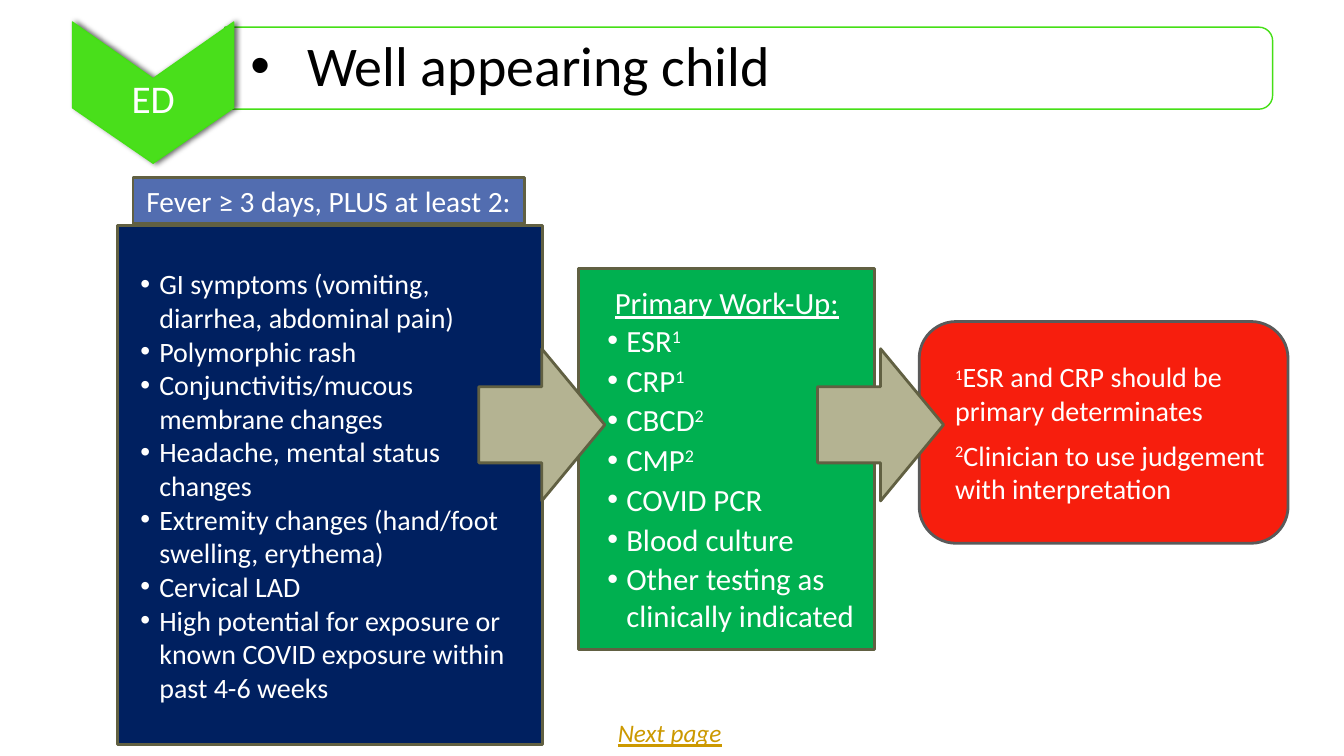
"""Build the slide on the work-up of a well appearing child."""
from dataclasses import dataclass, field
from typing import Any, Optional

from lxml.etree import SubElement
from pptx import Presentation
from pptx.dml.color import RGBColor
from pptx.enum.shapes import MSO_SHAPE
from pptx.enum.text import MSO_ANCHOR, MSO_AUTO_SIZE, PP_ALIGN
from pptx.oxml.ns import qn
from pptx.util import Pt

WHITE, OLIVE, GREEN = "FFFFFF", "616042", "45DF16"


@dataclass(frozen=True)
class Segment:
    """A stretch of text, raised when it is a note mark."""
    text: str
    raised: bool = False
    size: Optional[float] = None


@dataclass(frozen=True)
class TextStyle:
    """Look of one paragraph, with lengths in points."""
    size: float
    color: str = WHITE
    bullet: bool = False
    margin: float = 0
    indent: float = 0
    font: dict[str, Any] = field(default_factory=dict)
    layout: dict[str, Any] = field(default_factory=dict)


@dataclass(frozen=True)
class Line:
    """One paragraph made of text segments."""
    segments: tuple[Segment, ...]
    style: TextStyle


@dataclass(frozen=True)
class Panel:
    """A shape or plain text box, with its place in points."""
    box: tuple[float, float, float, float]
    lines: tuple[Line, ...] = ()
    kind: Optional[MSO_SHAPE] = MSO_SHAPE.RECTANGLE
    fill: str = WHITE
    outline: str = OLIVE
    left_inset: float = 7.2


def rgb(color: str) -> RGBColor:
    """Turn a hex string into a colour."""
    return RGBColor.from_string(color)


def apply(target: Any, values: dict[str, Any]) -> None:
    """Set each named attribute on the target."""
    for name, value in values.items():
        setattr(target, name, value)


def place(shape: Any, box: tuple[float, float, float, float]) -> None:
    """Move and size a shape in points."""
    apply(shape, dict(zip(("left", "top", "width", "height"), map(Pt, box))))


def paint(shape: Any, fill: str, outline: str, width: float) -> None:
    """Give a shape a flat fill and outline."""
    shape.shadow.inherit = False
    shape.fill.solid()
    shape.fill.fore_color.rgb = rgb(fill)
    shape.line.color.rgb = rgb(outline)
    shape.line.width = Pt(width)


def add_bullet(properties: Any, color: str) -> None:
    """Add a round bullet in the given colour."""
    bullet_color = SubElement(properties, qn("a:buClr"))
    SubElement(bullet_color, qn("a:srgbClr"), val=color)
    SubElement(properties, qn("a:buFont"), typeface="Arial")
    SubElement(properties, qn("a:buChar"), char="•")


def write(shape: Any, lines: tuple[Line, ...], frame_values: dict[str, Any]) -> None:
    """Fill a shape with formatted paragraphs."""
    frame = shape.text_frame
    apply(frame, {"word_wrap": True, **frame_values})
    for index, line in enumerate(lines):
        style = line.style
        paragraph = frame.add_paragraph() if index else frame.paragraphs[0]
        apply(paragraph, {"alignment": PP_ALIGN.LEFT, **style.layout})
        properties = paragraph._p.get_or_add_pPr()
        properties.set("marL", str(Pt(style.margin)))
        properties.set("indent", str(Pt(style.indent)))
        if style.bullet:
            add_bullet(properties, style.color)
        for segment in line.segments:
            run = paragraph.add_run()
            run.text = segment.text
            apply(run.font, {"name": "Calibri", "size": Pt(segment.size or style.size), **style.font})
            run.font.color.rgb = rgb(style.color)
            if segment.raised:
                run._r.get_or_add_rPr().set("baseline", "30000")


def add_panel(slide: Any, panel: Panel) -> None:
    """Draw a panel and its text."""
    box = tuple(map(Pt, panel.box))
    frame_values: dict[str, Any] = {"margin_left": Pt(panel.left_inset)}
    if panel.kind is None:
        shape = slide.shapes.add_textbox(*box)
        frame_values["auto_size"] = MSO_AUTO_SIZE.SHAPE_TO_FIT_TEXT
    else:
        shape = slide.shapes.add_shape(panel.kind, *box)
        paint(shape, panel.fill, panel.outline, 2)
        frame_values["vertical_anchor"] = MSO_ANCHOR.MIDDLE
    if panel.lines:
        write(shape, panel.lines, frame_values)


def add_title(slide: Any) -> None:
    """Place the title on a banner with rounded right corners."""
    left, top, width, height = box = (160.6, 19.4, 748.4, 58.6)
    banner = slide.shapes.add_shape(MSO_SHAPE.ROUND_2_SAME_RECTANGLE, 0, 0, 0, 0)
    place(banner, (left + (width - height) / 2, top - (width - height) / 2, height, width))
    banner.rotation = 90
    paint(banner, WHITE, GREEN, 1)
    title = slide.shapes.title
    title._element.addprevious(banner._element)
    place(title, box)
    style = TextStyle(40, "000000", True, 45, -40.5, layout={"line_spacing": 0.9})
    write(title, plain(style, "Well appearing child"), {
        "vertical_anchor": MSO_ANCHOR.MIDDLE, "auto_size": MSO_AUTO_SIZE.NONE,
        "margin_left": Pt(13.7), "margin_right": Pt(4.3),
        "margin_top": Pt(4.3), "margin_bottom": Pt(4.3)})


def add_chevron(slide: Any) -> None:
    """Draw the downward chevron with its soft shadow."""
    left, middle, right = 51.8, 109.4, 167
    points = [(right, 77), (middle, 116.6), (left, 77), (left, 15.8), (middle, 56.2)]
    builder = slide.shapes.build_freeform(Pt(right), Pt(15.8))
    builder.add_line_segments([(Pt(x), Pt(y)) for x, y in points])
    chevron = builder.convert_to_shape()
    paint(chevron, "49DF1B", GREEN, 1)
    effects = chevron._element.spPr.find(qn("a:effectLst"))
    shadow = SubElement(effects, qn("a:outerShdw"), blurRad=str(Pt(4)), dist=str(Pt(2)), dir="0")
    color = SubElement(shadow, qn("a:srgbClr"), val="000000")
    SubElement(color, qn("a:alpha"), val="60000")


def plain(style: TextStyle, *texts: str) -> tuple[Line, ...]:
    """Make one paragraph of each text."""
    return tuple(Line((Segment(text),), style) for text in texts)


CENTERED = {"alignment": PP_ALIGN.CENTER}
SYMPTOM = TextStyle(20, bullet=True, margin=22.5, indent=-13.5)
TEST = TextStyle(22, bullet=True, margin=27, indent=-13.5,
                 layout={"space_before": Pt(1), "space_after": Pt(1)})
HEADING = TextStyle(22, font={"underline": True}, layout=CENTERED)
FIRST_NOTE = TextStyle(20, margin=18, layout={"space_after": Pt(6)})
SECOND_NOTE = TextStyle(20, margin=18, layout={"space_before": Pt(2)})
NEXT_PAGE = TextStyle(18, "CC9900", font={"italic": True, "underline": True})

SYMPTOMS = plain(
    SYMPTOM, "GI symptoms (vomiting, diarrhea, abdominal pain)", "Polymorphic rash",
    "Conjunctivitis/mucous membrane changes", "Headache, mental status changes",
    "Extremity changes (hand/foot swelling, erythema)", "Cervical LAD",
    "High potential for exposure or known COVID exposure within past 4-6 weeks")
MARKED_TESTS = tuple(
    Line((Segment(test), Segment(mark, True)), TEST)
    for test, mark in (("ESR", "1"), ("CRP", "1"), ("CBCD", "2"), ("CMP", "2")))
WORK_UP = (plain(HEADING, "Primary Work-Up:") + MARKED_TESTS
           + plain(TEST, "COVID PCR", "Blood culture", "Other testing as clinically indicated"))
NOTES = (
    Line((Segment("1", True, 18), Segment("ESR and CRP should be primary determinates")), FIRST_NOTE),
    Line((Segment("2", True), Segment("Clinician to use judgement with interpretation")), SECOND_NOTE))
PANELS = (
    Panel((54.7, 49.7, 109.4, 41), plain(TextStyle(28, layout=CENTERED), "ED"), None),
    Panel((95, 126.7, 279.5, 33.1),
          plain(TextStyle(21, layout=CENTERED), "Fever ≥ 3 days, PLUS at least 2:"), fill="526DB0"),
    Panel((84.2, 161.3, 303.1, 370.8), SYMPTOMS, fill="002060"),
    Panel((413.3, 191.5, 211.7, 272.2), WORK_UP, fill="00B050"),
    Panel((434.2, 509, 90.7, 28.8), plain(NEXT_PAGE, "Next page"), None),
    Panel((656.6, 229.7, 263.5, 158.4), NOTES, MSO_SHAPE.ROUNDED_RECTANGLE, "F71E0D", "5A5A5A", 0),
    *(Panel((left, 249.1, 90, 108.7), kind=MSO_SHAPE.RIGHT_ARROW, fill="B4B392")
      for left in (342, 584)))


def main() -> None:
    """Build and save the presentation."""
    presentation = Presentation()
    apply(presentation, {"slide_width": Pt(960), "slide_height": Pt(540)})
    slide = presentation.slides.add_slide(presentation.slide_layouts[5])
    add_title(slide)
    add_chevron(slide)
    for panel in PANELS:
        add_panel(slide, panel)
    presentation.save("out.pptx")


if __name__ == "__main__":
    main()
